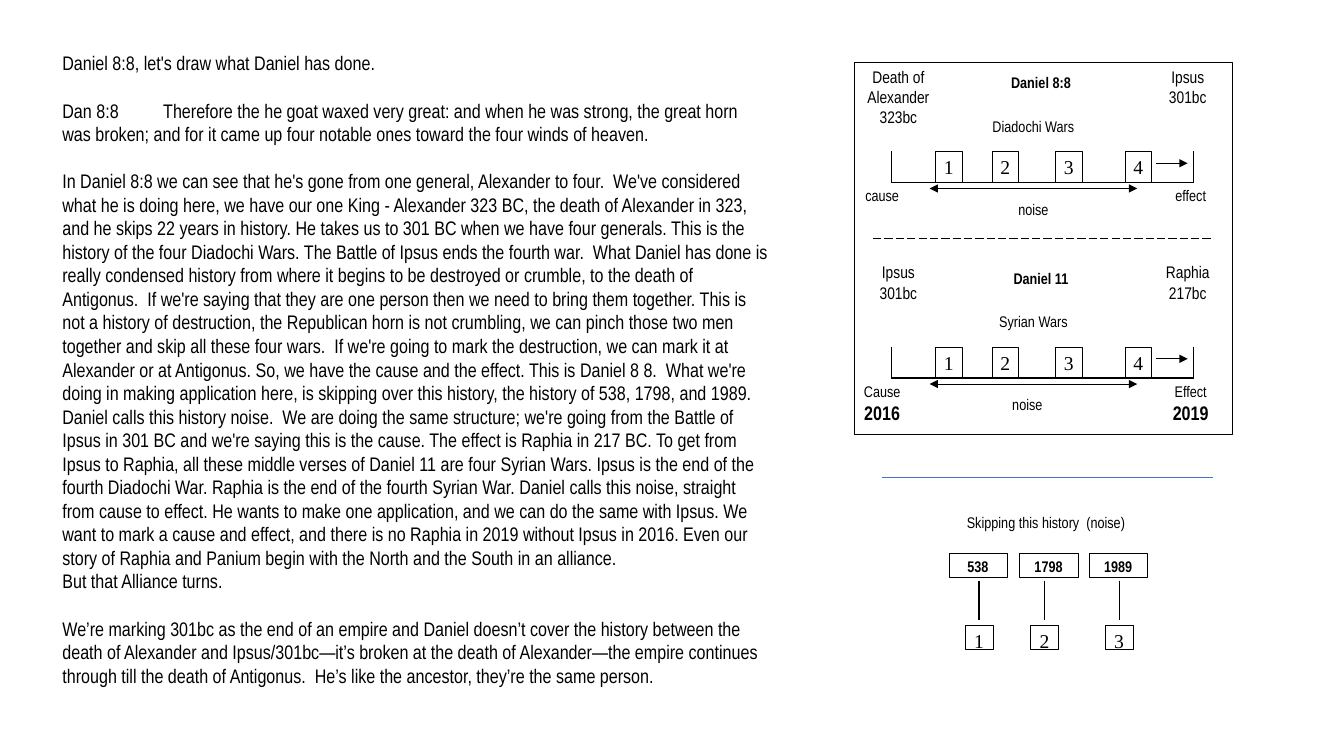
from dataclasses import dataclass

from lxml.etree import SubElement
from pptx import Presentation
from pptx.dml.color import RGBColor
from pptx.enum.dml import MSO_LINE
from pptx.enum.shapes import MSO_CONNECTOR, MSO_SHAPE
from pptx.enum.text import MSO_ANCHOR, MSO_AUTO_SIZE, PP_ALIGN
from pptx.oxml.ns import qn
from pptx.util import Inches, Pt


@dataclass(frozen=True)
class Theme:
    ink: RGBColor = RGBColor(0, 0, 0)
    divider: RGBColor = RGBColor(0x44, 0x72, 0xC4)
    sans: str = "Arial Narrow"
    serif: str = "Times New Roman"
    body: float = 14
    event: float = 12
    label: float = 11
    box_line: float = 0.25
    line: float = 0.75
    divider_line: float = 0.5


theme = Theme()
LABEL = {"name": theme.sans, "size": Pt(theme.label), "bold": False}
BOLD = {**LABEL, "bold": True}
EVENT = {**LABEL, "size": Pt(theme.event)}
YEAR = {**BOLD, "size": Pt(theme.body)}
NUMBER = {"name": theme.serif, "size": Pt(theme.body), "bold": False}
BODY = {**LABEL, "size": Pt(theme.body)}

prs = Presentation()
prs.slide_width, prs.slide_height = Inches(13.33), Inches(7.5)
slide = prs.slides.add_slide(prs.slide_layouts[6])
shapes = slide.shapes


def add_label(left, top, width, height, lines, boxed=False):
    """Centred text from (text, font) pairs, with a thin outline if boxed."""
    place = [Inches(v) for v in (left, top, width, height)]
    if boxed:
        label = shapes.add_shape(MSO_SHAPE.RECTANGLE, *place)
        label.shadow.inherit = False
        label.fill.background()
        label.line.color.rgb = theme.ink
        label.line.width = Pt(theme.box_line)
    else:
        label = shapes.add_textbox(*place)
    frame = label.text_frame
    frame.word_wrap = True
    frame.vertical_anchor = MSO_ANCHOR.TOP
    for side in ("left", "top", "right", "bottom"):
        setattr(frame, f"margin_{side}", Inches(0.04))
    for i, (text, font) in enumerate(lines):
        paragraph = frame.add_paragraph() if i else frame.paragraphs[0]
        paragraph.alignment = PP_ALIGN.CENTER
        run = paragraph.add_run()
        run.text = text
        run.font.color.rgb = theme.ink
        for key, value in font.items():
            setattr(run.font, key, value)


def add_line(x1, y1, x2, y2, arrows=(), color=theme.ink, width=theme.line):
    """Straight line; arrows lists the ends to point: headEnd (start), tailEnd (finish)."""
    line = shapes.add_connector(MSO_CONNECTOR.STRAIGHT,
                                *[Inches(v) for v in (x1, y1, x2, y2)])
    line.line.color.rgb = color
    line.line.width = Pt(width)
    for end in arrows:
        SubElement(line.line._get_or_add_ln(), qn(f"a:{end}"), type="triangle")
    SubElement(line._element.spPr, qn("a:effectLst"))
    return line


# Notes on the left: (starts a new block, passages of the paragraph)
notes = [
    (False, ["Daniel 8:8, let's draw what Daniel has done."]),
    (True, ["Dan 8:8\tTherefore the he goat waxed very great: and when he was strong, the great "
            "horn was broken; and for it came up four notable ones toward the four winds of "
            "heaven."]),
    (True, [
        "In Daniel 8:8 we can see that he's gone from one general, Alexander to four.  We've "
        "considered what he is doing here, we have our one King - Alexander 323 BC, the death "
        "of Alexander in 323, and he skips 22 years in history. He takes us to 301 BC when we "
        "have four generals. This is the history of the four Diadochi Wars. The Battle of Ipsus "
        "ends the fourth war.  ",
        "What Daniel has done is really condensed history from where it begins to be destroyed "
        "or crumble, to the death of Antigonus.  If we're saying that they are one person then "
        "we need to bring them together. This is not a history of destruction, the Republican "
        "horn is not crumbling, we can pinch those two men together and skip all these four "
        "wars.  ",
        "If we're going to mark the destruction, we can mark it at Alexander or at Antigonus. "
        "So, we have the cause and the effect. This is Daniel 8 8.  What we're doing in making "
        "application here, is skipping over this history, the history of 538, 1798, and 1989. "
        "Daniel calls this history noise.  ",
        "We are doing the same structure; we're going from the Battle of Ipsus in 301 BC and "
        "we're saying this is the cause. The effect is Raphia in 217 BC. To get from Ipsus to "
        "Raphia, all these middle verses of Daniel 11 are four Syrian Wars. Ipsus is the end of "
        "the fourth Diadochi War. Raphia is the end of the fourth Syrian War. ",
        "Daniel calls this noise, straight from cause to effect. He wants to make one "
        "application, and we can do the same with Ipsus. We want to mark a cause and effect, "
        "and there is no Raphia in 2019 without Ipsus in 2016. Even our story of Raphia and "
        "Panium begin with the North and the South in an alliance.",
    ]),
    (False, ["But that Alliance turns."]),
    (True, ["We’re marking 301bc as the end of an empire and Daniel doesn’t cover the history "
            "between the death of Alexander and Ipsus/301bc—it’s broken at the death of "
            "Alexander—the empire continues through till the death of Antigonus.  He’s like the "
            "ancestor, they’re the same person."]),
]
commentary = shapes.add_textbox(Inches(0.52), Inches(0.46), Inches(7.22), Inches(6.7)).text_frame
commentary.word_wrap = True
commentary.auto_size = MSO_AUTO_SIZE.SHAPE_TO_FIT_TEXT
for i, (new_block, passages) in enumerate(notes):
    paragraph = commentary.add_paragraph() if i else commentary.paragraphs[0]
    paragraph.space_before = Pt(16.9 if new_block else 0)
    run = paragraph.add_run()
    run.text = "".join(passages)
    run.font.color.rgb = theme.ink
    for key, value in BODY.items():
        setattr(run.font, key, value)

# Two timelines in one frame
add_label(8.47, 0.62, 3.75, 3.69, [], boxed=True)
timelines = [
    {"top": 0.62, "title": "Daniel 8:8", "wars": "Diadochi Wars", "noise_left": 9.78,
     "start": ["Death of", "Alexander", "323bc"], "end": ["Ipsus", "301bc"],
     "cause": [("cause", LABEL)], "effect": [("effect", LABEL)]},
    {"top": 2.56, "title": "Daniel 11", "wars": "Syrian Wars", "noise_left": 9.72,
     "start": ["Ipsus", "301bc"], "end": ["Raphia", "217bc"],
     "cause": [("Cause", LABEL), ("2016", YEAR)],
     "effect": [("Effect", LABEL), ("2019", YEAR)]},
]
for timeline in timelines:
    top = timeline["top"]
    tick, base = top + 0.88, top + 1.19
    for x in (8.84, 11.84):
        add_line(x, tick, x, base)
    add_line(8.84, base, 11.84, base)
    for left, side in ((8.47, "start"), (11.34, "end")):
        add_label(left, top, 0.88, 0.69, [(text, EVENT) for text in timeline[side]])
    add_label(9.47, top + 0.07, 1.71, 0.24, [(timeline["title"], BOLD)])
    add_label(9.78, top + 0.5, 0.94, 0.28, [(timeline["wars"], LABEL)])
    for number, left in enumerate((9.28, 9.84, 10.47, 11.16), 1):
        add_label(left, tick, 0.26, 0.31, [(str(number), NUMBER)], boxed=True)
    add_line(11.47, top + 1, 11.78, top + 1, ["tailEnd"])
    add_line(9.22, top + 1.25, 11.28, top + 1.25, ["headEnd", "tailEnd"])
    for left, side in ((8.47, "cause"), (11.53, "effect")):
        add_label(left, base, 0.56, 0.28 * len(timeline[side]), timeline[side])
    add_label(timeline["noise_left"], top + 1.32, 0.94, 0.28, [("noise", LABEL)])

add_line(8.66, 2.37, 12.03, 2.37).line.dash_style = MSO_LINE.LONG_DASH
add_line(8.75, 4.74, 12.03, 4.74, color=theme.divider, width=theme.divider_line)

# Skipped history: each year joined to its number
add_label(9.47, 5.05, 1.81, 0.28, [("Skipping this history  (noise)", LABEL)])
skipped = [("538", 9.41, 9.71), ("1798", 10.11, 10.36), ("1989", 10.8, 11.1)]
for number, (year, left, stem) in enumerate(skipped, 1):
    add_label(left, 5.49, 0.58, 0.24, [(year, BOLD)], boxed=True)
    add_line(stem, 5.76, stem, 6.15)
    add_label(stem - 0.14, 6.2, 0.28, 0.24, [(str(number), NUMBER)], boxed=True)

prs.save("out.pptx")
